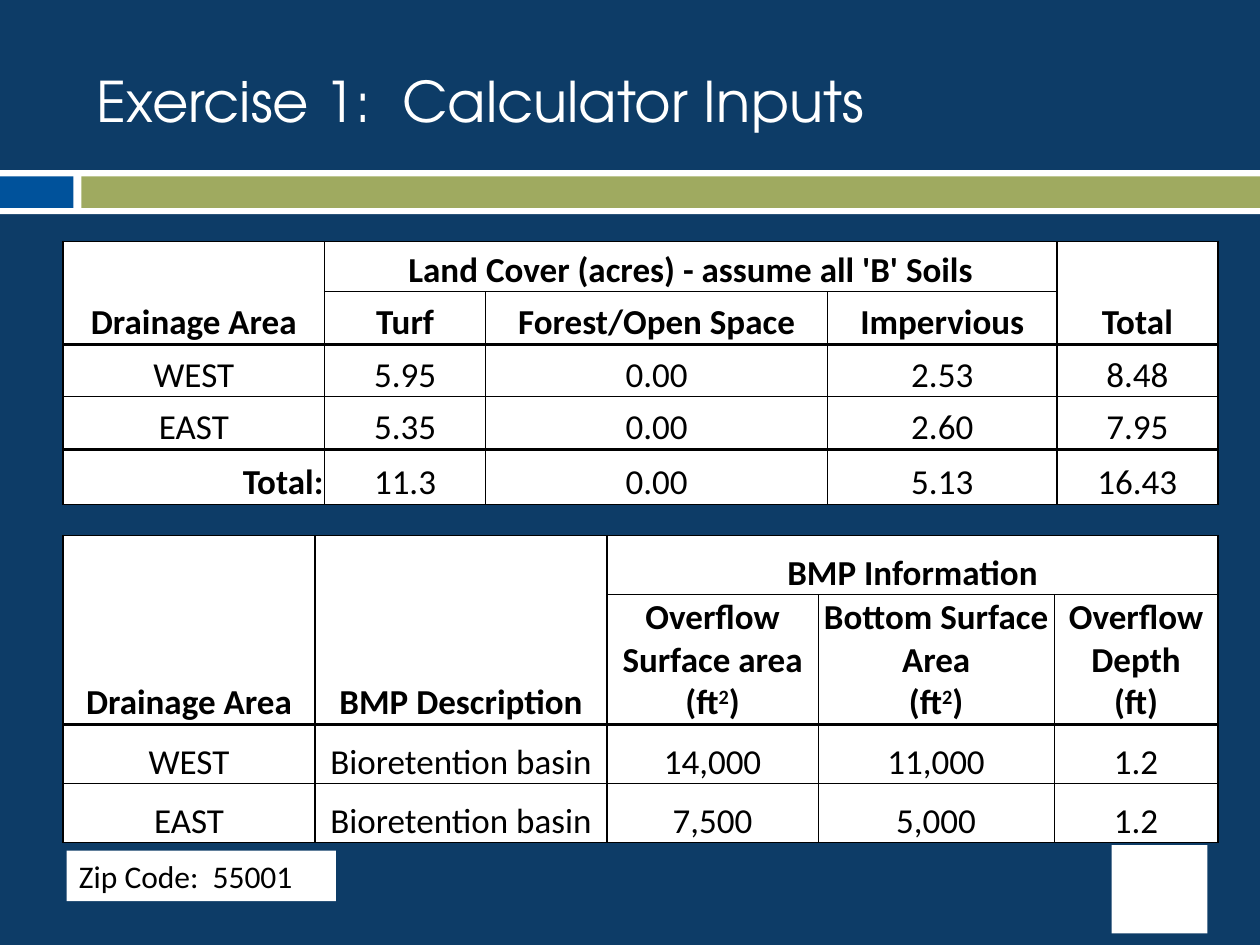
from lxml.etree import SubElement
from pptx import Presentation
from pptx.dml.color import RGBColor
from pptx.enum.shapes import MSO_SHAPE
from pptx.enum.text import MSO_ANCHOR, PP_ALIGN
from pptx.oxml.ns import qn
from pptx.util import Pt

NAVY, BLUE, OLIVE, WHITE, BLACK = "0D3C67", "00529B", "7F8E2B", "FFFFFF", "000000"


def paint(fill, color):
    fill.solid()
    fill.fore_color.rgb = RGBColor.from_string(color)


def style(span, font, size, color, bold=False):
    span.font.name = font
    span.font.size = Pt(size)
    span.font.bold = bold
    span.font.color.rgb = RGBColor.from_string(color)


def add_block(page, left, top, width, height, color):
    block = page.shapes.add_shape(
        MSO_SHAPE.RECTANGLE, Pt(left), Pt(top), Pt(width), Pt(height))
    block.shadow.inherit = False
    block.line.fill.background()
    paint(block.fill, color)
    return block


def add_label(page, left, top, width, height, text, font, size, color):
    box = page.shapes.add_textbox(Pt(left), Pt(top), Pt(width), Pt(height))
    frame = box.text_frame
    frame.word_wrap = True
    frame.vertical_anchor = MSO_ANCHOR.MIDDLE
    frame.text = text
    style(frame.paragraphs[0].runs[0], font, size, color)
    return box


def add_band(page, left, top, width, height):
    inset, split, gap = 3.6, 42, 4.5
    bar_top, bar_height = top + inset, height - 2 * inset
    start = split + gap
    add_block(page, left, top, width, height, WHITE)
    add_block(page, left, bar_top, split, bar_height, BLUE)
    bar = add_block(page, left + start, bar_top, width - start, bar_height, OLIVE)
    color = bar.fill._xPr.find(qn("a:solidFill"))[0]
    SubElement(color, qn("a:alpha"), val="75000")


def add_border(cell, side, width):
    line = SubElement(cell._tc.get_or_add_tcPr(), qn(f"a:ln{side}"), w=str(Pt(width)))
    fill = SubElement(line, qn("a:solidFill"))
    SubElement(fill, qn("a:srgbClr"), val=BLACK)


def fill_cell(cell, text, bold, align):
    cell.vertical_anchor = MSO_ANCHOR.BOTTOM
    cell.margin_left = cell.margin_right = cell.margin_top = Pt(0.7)
    cell.margin_bottom = 0
    paint(cell.fill, WHITE)
    if not text:
        return
    para = cell.text_frame.paragraphs[0]
    para.alignment = align
    start, *rest = text.split("^")
    para.text = start
    for part in rest:
        para.add_run().text = part
    for span in para.runs:
        style(span, "Calibri", 20, BLACK, bold)
    if rest:
        para.runs[-2]._r.get_or_add_rPr().set("baseline", "30000")


def add_grid(page, left, top, widths, heights, rows, merges, across, down):
    table = page.shapes.add_table(
        len(heights), len(widths), Pt(left), Pt(top),
        Pt(sum(widths)), Pt(sum(heights))).table
    table.first_row = table.horz_banding = False
    for column, width in zip(table.columns, widths):
        column.width = Pt(width)
    for row, height in zip(table.rows, heights):
        row.height = Pt(height)
    for first_row, first_column, last_row, last_column in merges:
        table.cell(first_row, first_column).merge(table.cell(last_row, last_column))
    for r, values in enumerate(rows):
        for c, text in enumerate(values):
            cell = table.cell(r, c)
            y1, x1, y2, x2 = next(
                (area for area in merges
                 if area[0] <= r <= area[2] and area[1] <= c <= area[3]),
                (r, c, r, c))
            origin = (r, c) == (y1, x1)
            for side, outer, width in (
                    ("L", c == x1, down[x1]), ("R", c == x2, down[x2 + 1]),
                    ("T", r == y1, across[y1]), ("B", r == y2, across[y2 + 1])):
                if origin or outer:
                    add_border(cell, side, width)
            total = text == "Total:"
            align = PP_ALIGN.RIGHT if total else PP_ALIGN.CENTER
            fill_cell(cell, text, r < 2 or total, align)


def add_land_cover(page, left, top):
    add_grid(
        page, left, top, [149.5, 92, 195.5, 131, 92], [28.8, 30, 30, 30, 31.5],
        [["Drainage Area", "Land Cover (acres) - assume all 'B' Soils", "", "", "Total"],
         ["", "Turf", "Forest/Open Space", "Impervious", ""],
         ["WEST", "5.95", "0.00", "2.53", "8.48"],
         ["EAST", "5.35", "0.00", "2.60", "7.95"],
         ["Total:", "11.3", "0.00", "5.13", "16.43"]],
        [(0, 0, 1, 0), (0, 1, 0, 3), (0, 4, 1, 4)],
        [1, 0.5, 2, 0.5, 2, 1], [1, 1, 0.5, 0.5, 1, 1])


def add_bmp_information(page, left, top):
    add_grid(
        page, left, top, [144, 167, 120.5, 135, 93.5], [33.8, 73.5, 33.8, 33.8],
        [["Drainage Area", "BMP Description", "BMP Information", "", ""],
         ["", "", "Overflow\vSurface area\v(ft^2^)",
          "Bottom Surface\vArea\v(ft^2^)", "Overflow\vDepth\v(ft)"],
         ["WEST", "Bioretention basin", "14,000", "11,000", "1.2"],
         ["EAST", "Bioretention basin", "7,500", "5,000", "1.2"]],
        [(0, 0, 1, 0), (0, 1, 1, 1), (0, 2, 0, 4)],
        [1, 0.5, 2, 0.5, 1], [1, 1, 1, 0.5, 0.5, 1])


def main():
    deck = Presentation()
    deck.slide_width, deck.slide_height = Pt(720), Pt(540)
    page = deck.slides.add_slide(deck.slide_layouts[6])
    paint(page.background.fill, NAVY)
    add_band(page, 0, 97.2, 720, 25.2)
    add_block(page, 635.3, 483, 54.7, 50.4, WHITE)
    add_land_cover(page, 36, 138)
    add_bmp_information(page, 36, 306)
    add_label(page, 48, 18, 642, 78, "Exercise 1:  Calculator Inputs",
              "TeX Gyre Adventor", 32, WHITE)
    zip_code = add_label(page, 38, 486, 154, 29, "Zip Code:  55001", "Calibri", 18, BLACK)
    paint(zip_code.fill, WHITE)
    deck.save("out.pptx")


if __name__ == "__main__":
    main()
